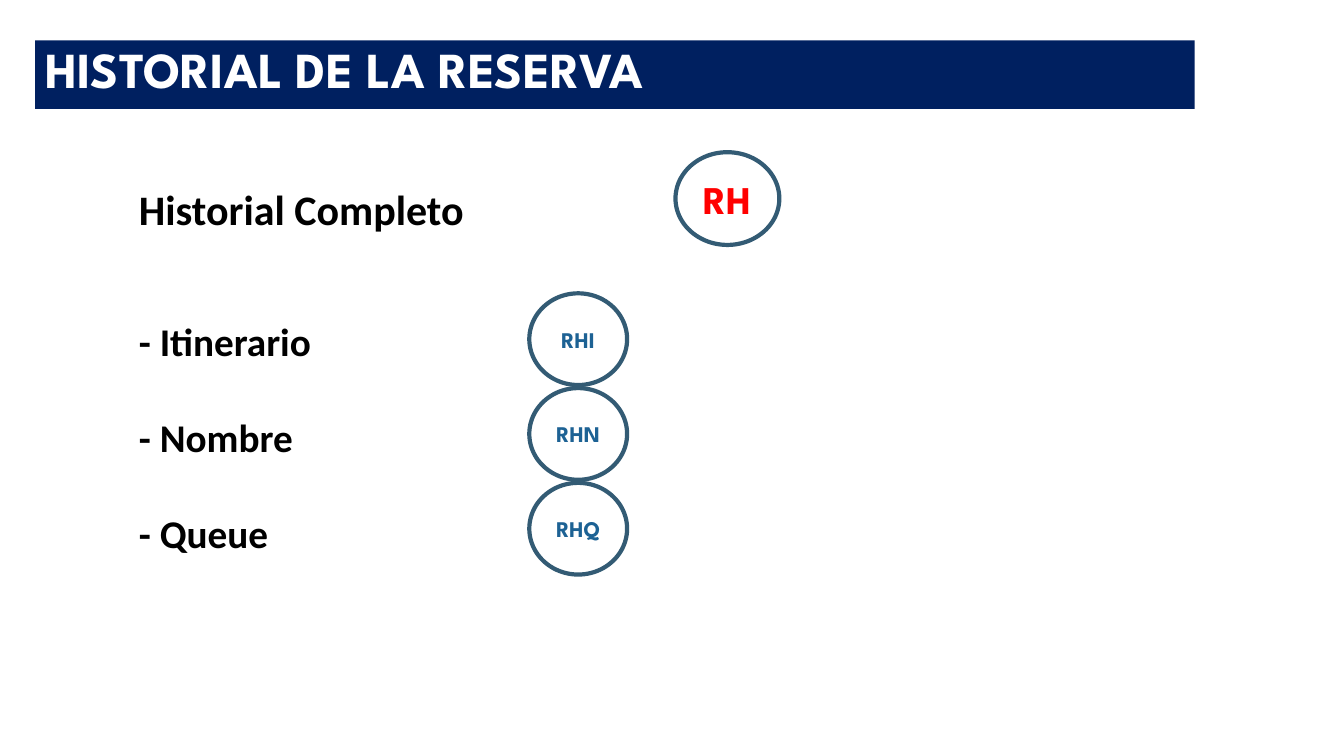
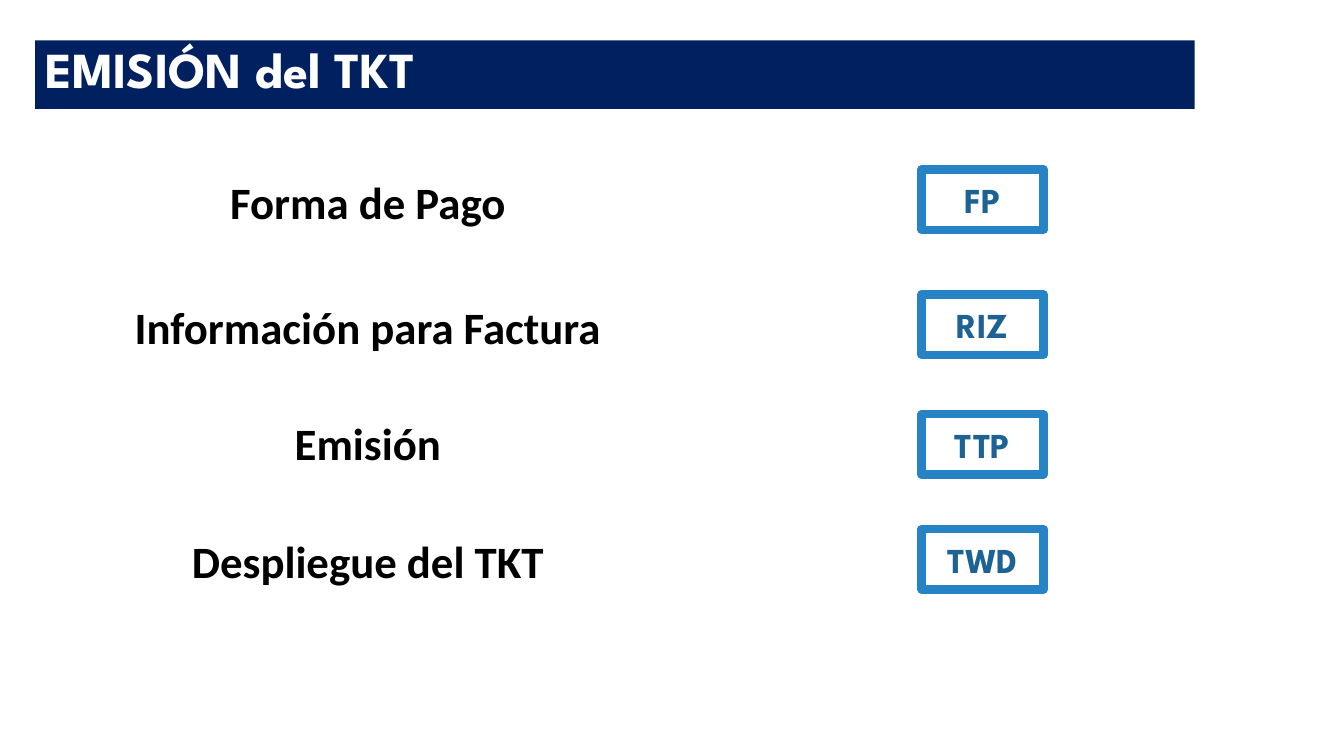
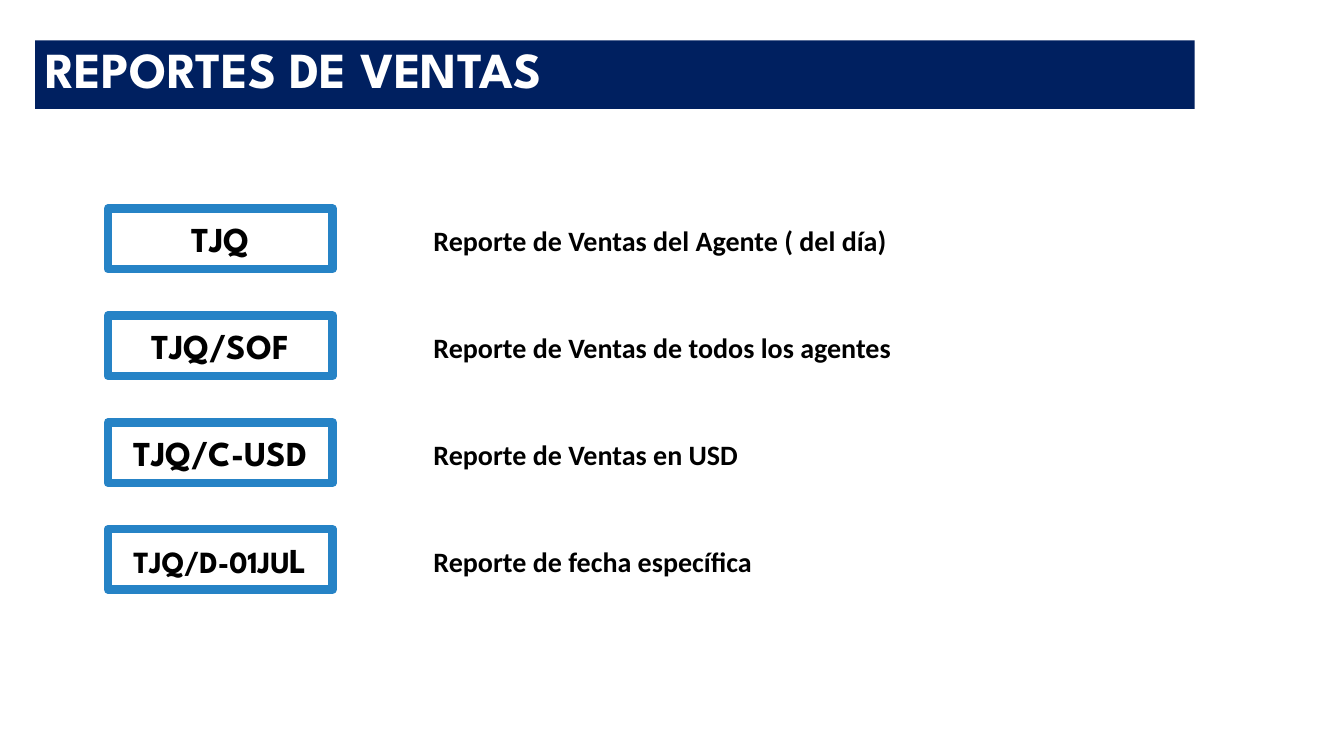
import dataclasses
import typing

import pptx
import pptx.dml.color
import pptx.enum.shapes
import pptx.enum.text
import pptx.presentation
import pptx.slide
import pptx.text.text
import pptx.util

Inches = pptx.util.Inches
Align = pptx.enum.text.PP_ALIGN
Anchor = pptx.enum.text.MSO_ANCHOR
Preset = pptx.enum.shapes.MSO_SHAPE

COLORS = {
    "navy": "002060",
    "white": "FFFFFF",
    "black": "000000",
    "red": "FF0000",
    "code": "1D6294",
    "ring": "335B74",
    "frame": "2683C6",
}
HEADING_FONT = "League Spartan"
BODY_FONT = "Calibri"


class Box(typing.NamedTuple):
    left: float
    top: float
    width: float
    height: float

    def lengths(self) -> list[pptx.util.Length]:
        return [Inches(value) for value in self]


class Run(typing.NamedTuple):
    text: str
    size: float


@dataclasses.dataclass(frozen=True)
class Style:
    font: str
    color: str
    align: Align = Align.CENTER
    line_spacing: float | None = None


@dataclasses.dataclass(frozen=True)
class Badge:
    preset: Preset
    fill: str
    line: str | None = None
    line_width: float = 0
    anchor: Anchor = Anchor.MIDDLE


TITLE_BOX = Box(0.35, 0.4, 11.5, 0.68)
TITLE_STYLE = Style(HEADING_FONT, "white", Align.LEFT, 0.9)
CODE_STYLE = Style(HEADING_FONT, "code")
LABEL_STYLE = Style(BODY_FONT, "black", Align.LEFT)
BAND = Badge(Preset.RECTANGLE, "navy", anchor=Anchor.TOP)
CIRCLE = Badge(Preset.OVAL, "white", "ring", 3)
FRAME = Badge(Preset.RECTANGLE, "white", "frame", 6)


def rgb(name: str) -> pptx.dml.color.RGBColor:
    return pptx.dml.color.RGBColor.from_string(COLORS[name])


def apply(target: object, values: dict[str, object]) -> None:
    for name, value in values.items():
        setattr(target, name, value)


def write(frame: pptx.text.text.TextFrame, runs: list[Run], style: Style) -> None:
    paragraph = frame.paragraphs[0]
    apply(paragraph, {"alignment": style.align, "line_spacing": style.line_spacing})
    for piece in runs:
        run = paragraph.add_run()
        run.text = piece.text
        apply(run.font, {"name": style.font, "size": pptx.util.Pt(piece.size), "bold": True})
        run.font.color.rgb = rgb(style.color)


def add_badge(slide: pptx.slide.Slide, box: Box, badge: Badge, runs: list[Run], style: Style) -> None:
    shape = slide.shapes.add_shape(badge.preset, *box.lengths())
    shape.shadow.inherit = False
    shape.fill.solid()
    shape.fill.fore_color.rgb = rgb(badge.fill)
    if badge.line:
        shape.line.color.rgb = rgb(badge.line)
        shape.line.width = pptx.util.Pt(badge.line_width)
    else:
        shape.line.fill.background()
    apply(shape.text_frame, {"word_wrap": True, "vertical_anchor": badge.anchor})
    write(shape.text_frame, runs, style)


def add_label(slide: pptx.slide.Slide, box: Box, run: Run, style: Style = LABEL_STYLE) -> None:
    frame = slide.shapes.add_textbox(*box.lengths()).text_frame
    apply(frame, {"word_wrap": True, "auto_size": pptx.enum.text.MSO_AUTO_SIZE.SHAPE_TO_FIT_TEXT})
    write(frame, [run], style)


def add_titled_slide(presentation: pptx.presentation.Presentation, title: str) -> pptx.slide.Slide:
    slide = presentation.slides.add_slide(presentation.slide_layouts[6])
    add_badge(slide, TITLE_BOX, BAND, [Run(title, 36)], TITLE_STYLE)
    return slide


def add_history(presentation: pptx.presentation.Presentation) -> None:
    slide = add_titled_slide(presentation, "HISTORIAL DE LA RESERVA")
    add_label(slide, Box(1.28, 1.77, 5.42, 0.61), Run("Historial Completo", 30))
    add_badge(slide, Box(6.7, 1.51, 1.03, 0.92), CIRCLE, [Run("RH", 28)], Style(HEADING_FONT, "red"))
    rows = [("- Itinerario", "RHI"), ("- Nombre", "RHN"), ("- Queue", "RHQ")]
    for index, (label, code) in enumerate(rows):
        add_label(slide, Box(1.28, 3.1 + 0.95 * index, 5.42, 0.57), Run(label, 28))
        add_badge(slide, Box(5.25, 2.91 + 0.94 * index, 0.97, 0.91), CIRCLE, [Run(code, 16)], CODE_STYLE)


def add_ticketing(presentation: pptx.presentation.Presentation) -> None:
    slide = add_titled_slide(presentation, "EMISIÓN del TKT")
    rows = [
        ("Forma de Pago", 1.68, "FP", 1.68),
        ("Información para Factura", 2.92, "RIZ", 2.92),
        ("Emisión", 4.08, "TTP", 4.11),
        ("Despliegue del TKT", 5.25, "TWD", 5.25),
    ]
    for label, label_top, code, code_top in rows:
        add_label(slide, Box(1.11, label_top, 5.08, 0.64), Run(label, 32), Style(BODY_FONT, "black"))
        add_badge(slide, Box(9.14, code_top, 1.21, 0.6), FRAME, [Run(code, 25)], CODE_STYLE)


def add_sales_reports(presentation: pptx.presentation.Presentation) -> None:
    slide = add_titled_slide(presentation, "REPORTES DE VENTAS")
    rows = [
        ([Run("TJQ", 25)], "Reporte de Ventas del Agente ( del día)"),
        ([Run("TJQ/SOF", 25)], "Reporte de Ventas de todos los agentes"),
        ([Run("TJQ/C-USD", 25)], "Reporte de Ventas en USD"),
        ([Run("TJQ/D-01JU", 22), Run("L", 25)], "Reporte de fecha específica"),
    ]
    for index, (code, label) in enumerate(rows):
        top = 2.07 + 1.06 * index
        add_badge(slide, Box(1.07, top, 2.23, 0.6), FRAME, code, Style(HEADING_FONT, "black"))
        add_label(slide, Box(4.2, top + 0.1, 5.08, 0.44), Run(label, 20))


def main() -> None:
    presentation = pptx.Presentation()
    apply(presentation, {"slide_width": Inches(13.33), "slide_height": Inches(7.5)})
    add_history(presentation)
    add_ticketing(presentation)
    add_sales_reports(presentation)
    presentation.save("out.pptx")


if __name__ == "__main__":
    main()
